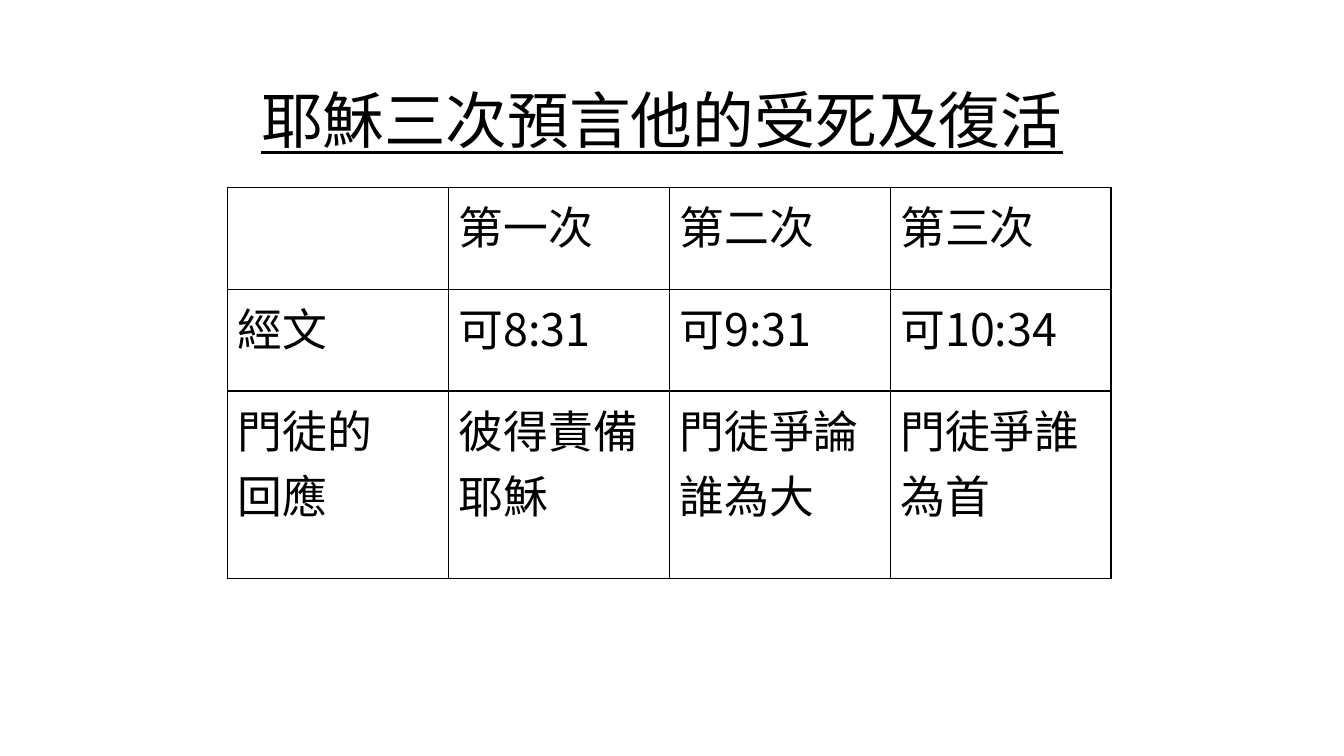
from lxml.etree import SubElement as Sub
from pptx import Presentation
from pptx.dml.color import RGBColor
from pptx.enum.text import MSO_ANCHOR as Anchor, MSO_AUTO_SIZE as Fit, PP_ALIGN as Align
from pptx.oxml.ns import qn
from pptx.util import Inches, Pt


def color(code):
    return RGBColor.from_string(code)


def write(frame, text, font="Noto Sans CJK JP", size=32, ink="000000", line=False):
    """Fill a text frame, one paragraph per line of text."""
    frame.word_wrap = True
    frame.text = text
    for para in frame.paragraphs:
        para.alignment = Align.LEFT
        para.line_spacing = 1.0
        for run in para.runs:
            run.font.name = font
            run.font.size = Pt(size)
            run.font.underline = line
            run.font.color.rgb = color(ink)
            # East Asian glyphs take their own font entry
            Sub(run.font._element, qn("a:ea"), typeface=font)


class Deck:
    ink = "000000"
    paper = "FFFFFF"
    edge = 1

    def __init__(self):
        self.prs = Presentation()
        self.prs.slide_width = Inches(13.33)
        self.prs.slide_height = Inches(7.5)
        self.slide = self.prs.slides.add_slide(self.prs.slide_layouts[5])

    def title(self, text, x, y, w, h):
        box = self.slide.shapes.title
        box.left, box.top, box.width, box.height = map(Inches, (x, y, w, h))
        frame = box.text_frame
        frame.auto_size = Fit.NONE
        frame.vertical_anchor = Anchor.MIDDLE
        write(frame, text, size=44, ink=self.ink, line=True)

    def border(self, cell):
        props = cell._tc.get_or_add_tcPr()
        for side in ("L", "R", "T", "B"):
            line = Sub(props, qn(f"a:ln{side}"), w=str(Pt(self.edge)))
            fill = Sub(line, qn("a:solidFill"))
            Sub(fill, qn("a:srgbClr"), val=self.ink)

    def table(self, rows, x, y, wide, highs):
        count = len(rows[0])
        table = self.slide.shapes.add_table(
            len(rows), count, Inches(x), Inches(y),
            Inches(wide * count), Inches(sum(highs))).table
        table.first_row = table.horz_banding = False
        for col in table.columns:
            col.width = Inches(wide)
        for row, high, texts in zip(table.rows, highs, rows):
            row.height = Inches(high)
            for cell, text in zip(row.cells, texts):
                self.border(cell)
                cell.fill.solid()
                cell.fill.fore_color.rgb = color(self.paper)
                write(cell.text_frame, text, ink=self.ink)

    def save(self):
        self.prs.save("out.pptx")


def main():
    deck = Deck()

    # Heading
    deck.title("耶穌三次預言他的受死及復活", 2.49, 0.76, 8.74, 0.84)

    # Three predictions side by side
    rows = [
        ("", "第一次", "第二次", "第三次"),
        ("經文", "可8:31", "可9:31", "可10:34"),
        ("門徒的\n回應", "彼得責備耶穌", "門徒爭論誰為大", "門徒爭誰為首"),
    ]
    deck.table(rows, 2.26, 1.86, 2.19, (1.01, 1.01, 1.86))

    deck.save()


if __name__ == "__main__":
    main()
